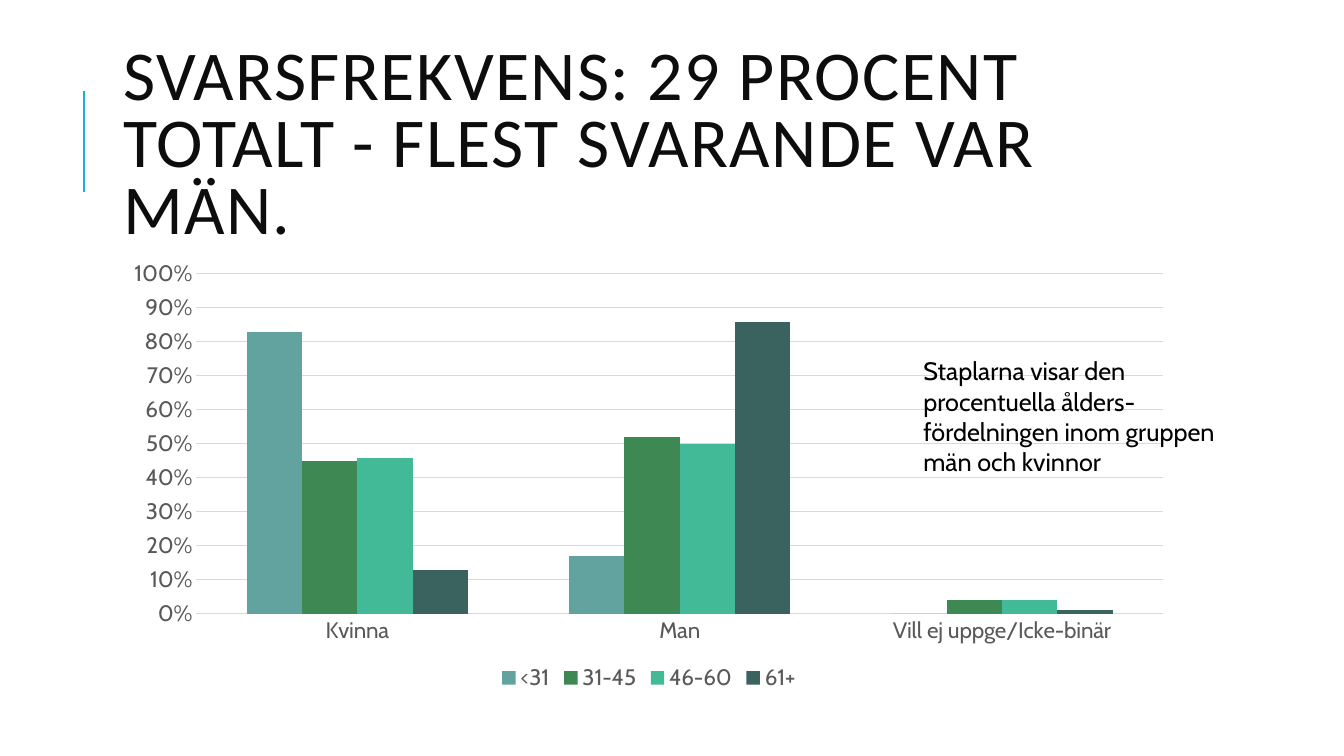
import pptx
import pptx.util
import pptx.chart.data
from pptx.dml.color import RGBColor
from pptx.enum.chart import XL_CHART_TYPE, XL_LEGEND_POSITION, XL_TICK_MARK
from pptx.enum.shapes import MSO_CONNECTOR
from pptx.enum.text import MSO_ANCHOR, MSO_AUTO_SIZE, PP_ALIGN
from pptx.util import Inches
from lxml import etree

ACCENT = RGBColor(0x1C, 0xAD, 0xE4)
TITLE = RGBColor(0x0D, 0x0D, 0x0D)
BLACK = RGBColor(0, 0, 0)
GREY = RGBColor(0x59, 0x59, 0x59)
GRID = RGBColor(0xD9, 0xD9, 0xD9)
TEAL = RGBColor(0x62, 0xA3, 0x9F)
GREEN = RGBColor(0x3E, 0x88, 0x53)
MINT = RGBColor(0x42, 0xBA, 0x97)
DARK_TEAL = RGBColor(0x3A, 0x63, 0x60)

CATEGORIES = ["Kvinna", "Man", "Vill ej uppge/Icke-binär"]
AGE_GROUPS = [
    ("<31", (0.83, 0.17, 0), TEAL),
    ("31-45", (0.45, 0.52, 0.04), GREEN),
    ("46-60", (0.46, 0.5, 0.04), MINT),
    ("61+", (0.13, 0.86, 0.01), DARK_TEAL),
]


class SlideBuilder:
    heading_font = "Calibri"
    body_font = "Cabin"

    def __init__(self, prs):
        self.s = prs.slides.add_slide(prs.slide_layouts[5])

    def style(self, font, size, color, name=None):
        font.name = name or self.body_font
        font.size = pptx.util.Pt(size)
        font.color.rgb = color

    def title(self, text, x, y, w, h):
        sp = self.s.shapes.title
        sp.left, sp.top, sp.width, sp.height = map(Inches, (x, y, w, h))
        tf = sp.text_frame
        tf.text = text
        tf.word_wrap = True
        tf.auto_size = MSO_AUTO_SIZE.NONE
        tf.vertical_anchor = MSO_ANCHOR.MIDDLE
        p = tf.paragraphs[0]
        p.alignment = PP_ALIGN.LEFT
        p.line_spacing = 0.8
        r = p.runs[0]
        self.style(r.font, 50, TITLE, self.heading_font)
        r.font._element.set("spc", "100")

    def line(self, x1, y1, x2, y2, color, width):
        c = self.s.shapes.add_connector(
            MSO_CONNECTOR.STRAIGHT, *map(Inches, (x1, y1, x2, y2)))
        c.line.color.rgb = color
        c.line.width = pptx.util.Pt(width)
        etree.SubElement(c._element.spPr, pptx.oxml.ns.qn("a:effectLst"))

    def text(self, text, x, y, w, h, size):
        tf = self.s.shapes.add_textbox(*map(Inches, (x, y, w, h))).text_frame
        tf.text = text
        tf.word_wrap = True
        tf.auto_size = MSO_AUTO_SIZE.SHAPE_TO_FIT_TEXT
        self.style(tf.paragraphs[0].runs[0].font, size, BLACK)

    def column_chart(self, categories, groups, x, y, w, h):
        data = pptx.chart.data.CategoryChartData(number_format="0%")
        data.categories = categories
        for name, values, _ in groups:
            data.add_series(name, values)
        chart = self.s.shapes.add_chart(
            XL_CHART_TYPE.COLUMN_CLUSTERED, *map(Inches, (x, y, w, h)), data).chart
        self.style(chart.font, 16, BLACK)
        chart.has_title = False

        # Columns
        plot = chart.plots[0]
        plot.gap_width = 182
        plot.overlap = 0
        plot.vary_by_categories = False
        for series, (_, _, color) in zip(plot.series, groups):
            series.format.fill.solid()
            series.format.fill.fore_color.rgb = color

        # Axes
        cat, val = chart.category_axis, chart.value_axis
        for axis in (cat, val):
            axis.major_tick_mark = axis.minor_tick_mark = XL_TICK_MARK.NONE
            self.style(axis.tick_labels.font, 16, GREY)
        val.minimum_scale, val.maximum_scale, val.major_unit = 0, 1, 0.1
        val.tick_labels.number_format = "0%"
        val.tick_labels.number_format_is_linked = False
        val.format.line.fill.background()
        val.has_major_gridlines = True
        for line in (cat.format.line, val.major_gridlines.format.line):
            line.color.rgb = GRID
            line.width = pptx.util.Pt(0.75)

        # Legend
        chart.has_legend = True
        chart.legend.position = XL_LEGEND_POSITION.BOTTOM
        chart.legend.include_in_layout = False
        self.style(chart.legend.font, 16, GREY)


def main():
    prs = pptx.Presentation()
    prs.slide_width, prs.slide_height = Inches(13.33), Inches(7.5)
    slide = SlideBuilder(prs)

    # Heading with accent line
    slide.line(0.83, 1.9, 0.83, 0.9, ACCENT, 1.5)
    slide.title("SVARSFREKVENS: 29 PROCENT TOTALT - FLEST SVARANDE VAR MÄN.",
                1.12, 0.64, 10.63, 1.64)

    # Age distribution and its explanation
    slide.column_chart(CATEGORIES, AGE_GROUPS, 1.12, 2.5, 10.63, 4.4)
    slide.text("Staplarna visar den procentuella ålders-fördelningen "
               "inom gruppen män och kvinnor", 9.06, 3.48, 3.16, 1.31, 18)

    prs.save("out.pptx")


if __name__ == "__main__":
    main()
